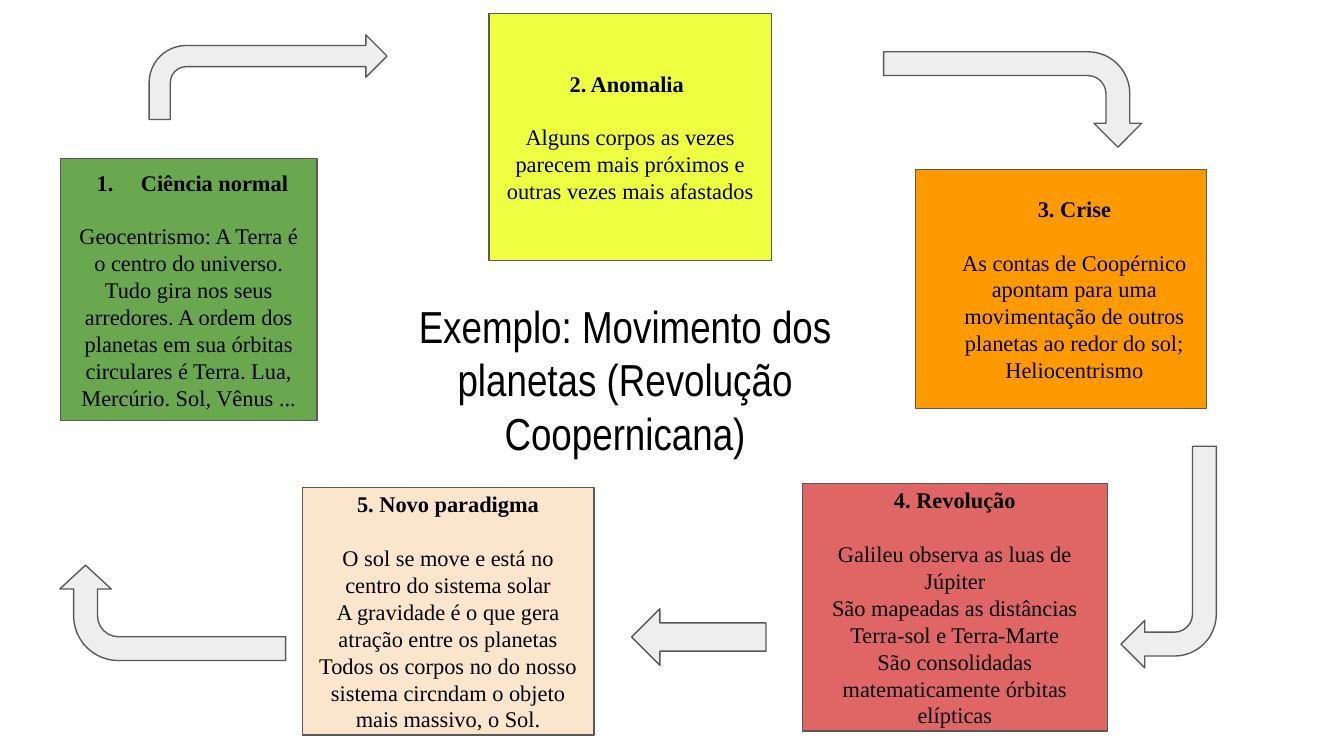
import pptx
import pptx.util
import pptx.dml.color
import pptx.enum.shapes
import pptx.enum.text
import lxml.etree

SHAPES = pptx.enum.shapes.MSO_SHAPE
ALIGN = pptx.enum.text.PP_ALIGN
ANCHOR = pptx.enum.text.MSO_ANCHOR

COLUMNS = 1000
COLORS = {
    "green": "6AA84F", "yellow": "EEFF41", "orange": "FF9900", "red": "E06666",
    "peach": "FCE5CD", "arrow": "EEEEEE", "outline": "595959", "text": "000000",
}

TITLE = "Exemplo: Movimento dos planetas (Revolução Coopernicana)"
TITLE_AREA = (249, 212, 432, 141)

STAGES = [
    {"area": (45, 118, 191, 195), "color": "green", "title": "Ciência normal",
     "heading": {"align": ALIGN.LEFT, "margin": 0.5, "indent": -0.33, "numbered": True},
     "body": ["Geocentrismo: A Terra é o centro do universo. Tudo gira nos seus arredores. "
              "A ordem dos planetas em sua órbitas circulares é Terra. Lua, Mercúrio. Sol, Vênus ..."]},
    {"area": (364, 10, 210, 184), "color": "yellow", "title": "2. Anomalia",
     "heading": {"align": ALIGN.LEFT, "margin": 0.5},
     "body": ["Alguns corpos as vezes parecem mais próximos e outras vezes mais afastados"]},
    {"area": (681, 126, 217, 178), "color": "orange", "title": "3. Crise", "margin": 0.2,
     "body": ["As contas de Coopérnico apontam para uma movimentação de outros planetas "
              "ao redor do sol; Heliocentrismo"]},
    {"area": (597, 360, 227, 184), "color": "red", "title": "4. Revolução",
     "body": ["Galileu observa as luas de Júpiter",
              "São mapeadas as distâncias Terra-sol e Terra-Marte",
              "São consolidadas matematicamente órbitas elípticas"]},
    {"area": (225, 363, 217, 184), "color": "peach", "title": "5. Novo paradigma",
     "body": ["O sol se move e está no centro do sistema solar",
              "A gravidade é o que gera atração entre os planetas",
              "Todos os corpos no do nosso sistema circndam o objeto mais massivo, o Sol."]},
]

ARROWS = [
    (SHAPES.BENT_ARROW, (111, 26, 177, 63), 0, (0.25, 0.25, 0.25, 0.44)),
    (SHAPES.BENT_ARROW, (718, -22, 71, 192), 90, (0.25, 0.25, 0.25, 0.44)),
    (SHAPES.BENT_ARROW, (834, 332, 71, 165), 180, (0.25, 0.25, 0.25, 0.44)),
    (SHAPES.BENT_ARROW, (93, 372, 71, 168), 270, (0.25, 0.27, 0.25, 0.47)),
    (SHAPES.LEFT_ARROW, (470, 453, 100, 42), 0, (0.5, 0.5)),
]

presentation = pptx.Presentation()
presentation.slide_width = pptx.util.Inches(10)
presentation.slide_height = presentation.slide_width * 9 // 16
slide = presentation.slides.add_slide(presentation.slide_layouts[6])


def place(area):
    return [round(cells * presentation.slide_width / COLUMNS) for cells in area]


def color(name):
    return pptx.dml.color.RGBColor.from_string(COLORS[name])


def add_box(kind, area, fill):
    shape = slide.shapes.add_shape(kind, *place(area))
    shape.shadow.inherit = False
    shape.fill.solid()
    shape.fill.fore_color.rgb = color(fill)
    shape.line.color.rgb = color("outline")
    shape.line.width = pptx.util.Pt(0.75)
    return shape


def prepare_frame(shape, anchor):
    frame = shape.text_frame
    frame.word_wrap = True
    frame.vertical_anchor = anchor
    frame.margin_left = frame.margin_right = pptx.util.Inches(0.1)
    frame.margin_top = frame.margin_bottom = pptx.util.Inches(0.1)
    return frame


def write(paragraph, text, font="Times New Roman", size=12, bold=False, align=ALIGN.CENTER,
          margin=0, indent=0, after=0, numbered=False):
    paragraph.alignment = align
    paragraph.space_after = pptx.util.Pt(after)
    run = paragraph.add_run()
    run.text = text
    run.font.name = font
    run.font.size = pptx.util.Pt(size)
    run.font.bold = bold
    run.font.color.rgb = color("text")
    properties = paragraph._p.get_or_add_pPr()
    properties.set("marL", str(pptx.util.Inches(margin)))
    properties.set("indent", str(pptx.util.Inches(indent)))
    if numbered:
        number = lxml.etree.SubElement(properties, pptx.oxml.ns.qn("a:buAutoNum"))
        number.set("type", "arabicPeriod")


for stage in STAGES:
    frame = prepare_frame(add_box(SHAPES.RECTANGLE, stage["area"], stage["color"]), ANCHOR.MIDDLE)
    margin = stage.get("margin", 0)
    heading = {"margin": margin, **stage.get("heading", {})}
    write(frame.paragraphs[0], stage["title"], bold=True, after=14.4, **heading)
    for text in stage["body"]:
        write(frame.add_paragraph(), text, margin=margin)

for kind, area, rotation, adjustments in ARROWS:
    arrow = add_box(kind, area, "arrow")
    arrow.rotation = rotation
    for index, value in enumerate(adjustments):
        arrow.adjustments[index] = value

title_box = slide.shapes.add_textbox(*place(TITLE_AREA))
title_frame = prepare_frame(title_box, ANCHOR.TOP)
title_frame.auto_size = pptx.enum.text.MSO_AUTO_SIZE.SHAPE_TO_FIT_TEXT
write(title_frame.paragraphs[0], TITLE, font="Arial Narrow", size=24)

presentation.save("out.pptx")
